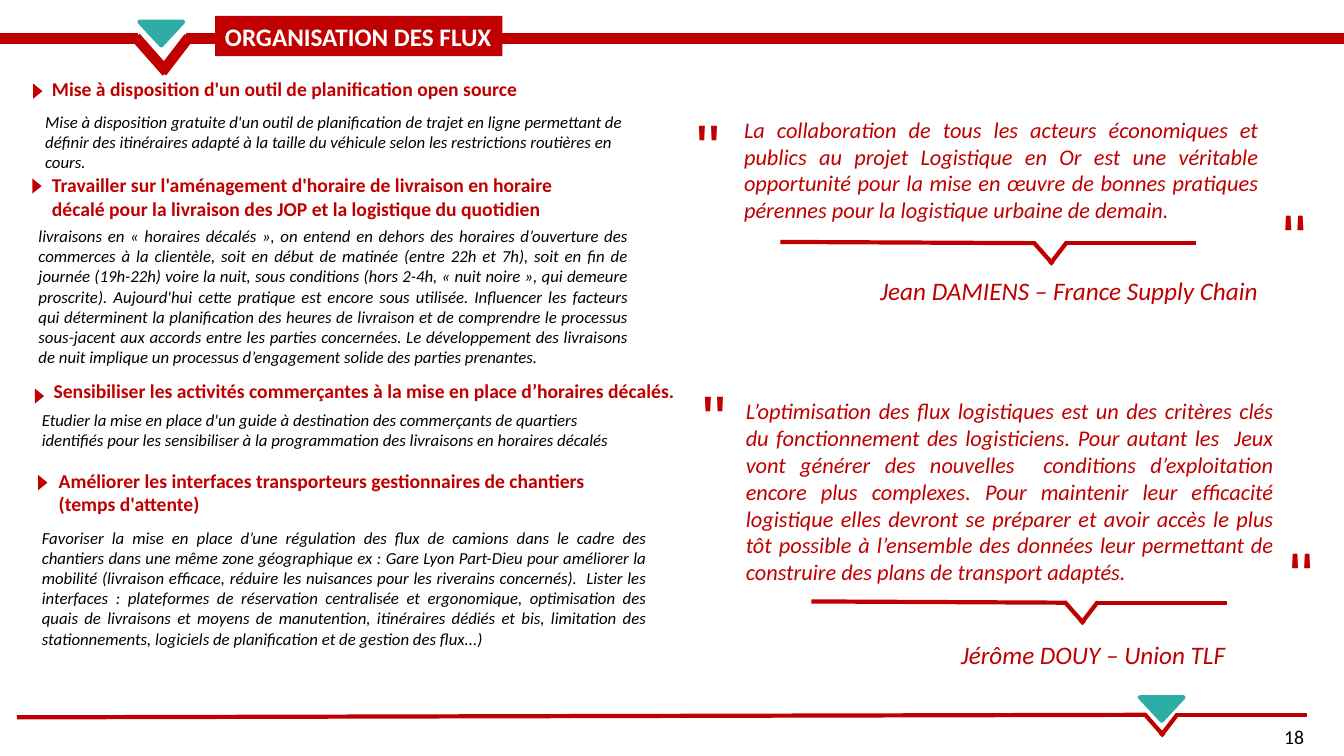
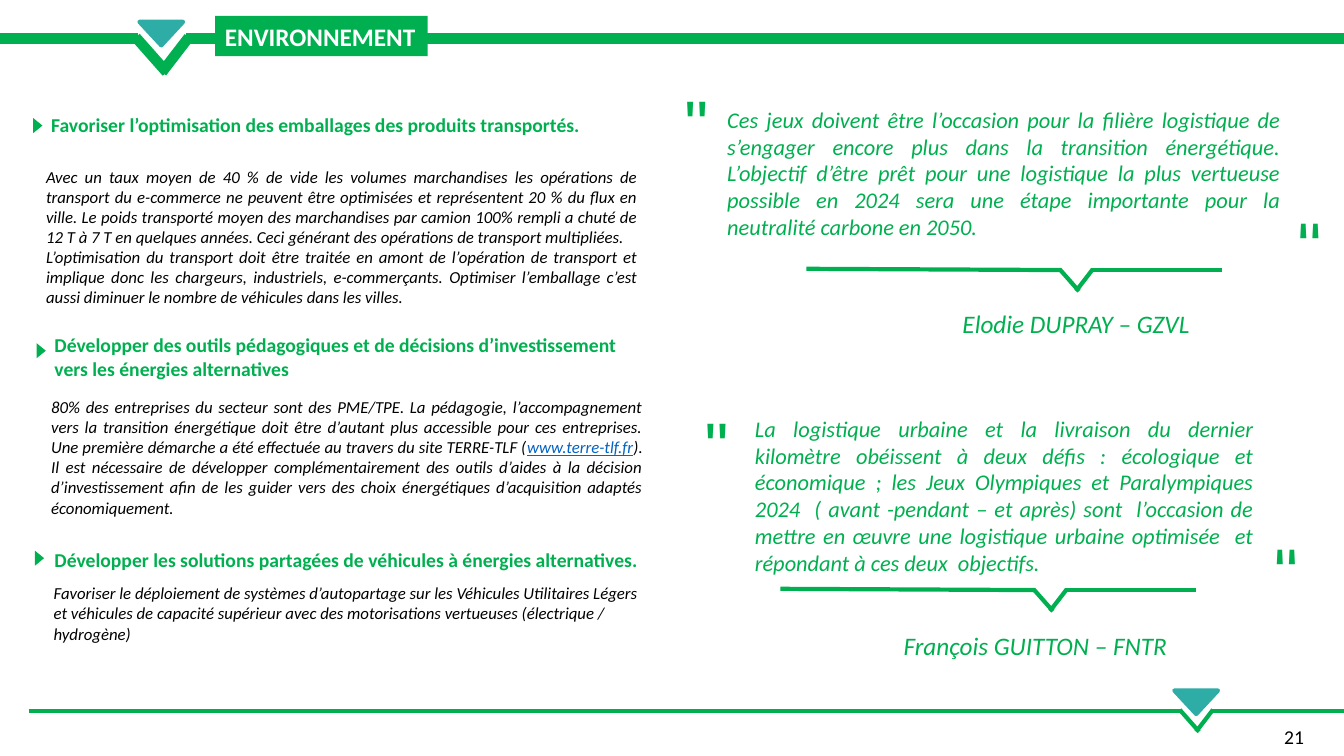
"""Build two theme slides with measures on the left and quotes on the right."""
from dataclasses import dataclass
from typing import NamedTuple

import lxml.etree
import pptx
import pptx.dml.color
import pptx.enum.shapes
import pptx.enum.text
import pptx.oxml.ns
import pptx.shapes.autoshape
import pptx.slide
import pptx.util

COLS, ROWS = 160, 90
UNIT = 76200
TEAL, BLACK, WHITE, BLUE = "2EACA6", "000000", "FFFFFF", "0563C1"
RED, GREEN = "C00000", "00B050"
SHAPE = pptx.enum.shapes.MSO_SHAPE
ALIGN = pptx.enum.text.PP_ALIGN


class Spot(NamedTuple):
    x: float
    y: float


class Box(NamedTuple):
    x: float
    y: float
    w: float
    h: float


@dataclass
class Rule:
    start: Spot
    neck: Spot
    end: float
    scale: float = 1
    width: float = 3


@dataclass
class Point:
    mark: Spot
    head: Box
    title: str
    body: Box
    words: str
    full: bool = False
    link: str = ""


@dataclass
class Quote:
    open: Spot
    close: Spot
    box: Box
    words: str
    rule: Spot
    sign: Box
    name: str


@dataclass
class Theme:
    title: str
    span: float
    tint: str
    page: str
    foot: Rule
    peak: Spot
    points: list[Point]
    quotes: list[Quote]


def size(cells: float) -> pptx.util.Emu:
    return pptx.util.Emu(round(cells * UNIT))


def tone(code: str) -> pptx.dml.color.RGBColor:
    return pptx.dml.color.RGBColor.from_string(code)


def write(frame: pptx.text.text.TextFrame, words: str, *, pt: float, tint: str,
          bold: bool = False, slant: bool = False, full: bool = False,
          font: str = "Calibri", link: str = "", wrap: bool = True) -> None:
    frame.word_wrap = wrap
    frame.auto_size = pptx.enum.text.MSO_AUTO_SIZE.SHAPE_TO_FIT_TEXT
    frame.vertical_anchor = pptx.enum.text.MSO_ANCHOR.TOP
    for i, line in enumerate(words.split("\n")):
        para = frame.add_paragraph() if i else frame.paragraphs[0]
        para.alignment = ALIGN.JUSTIFY if full else ALIGN.LEFT
        for piece in line.partition(link) if link else (line,):
            if not piece:
                continue
            run = para.add_run()
            run.text = piece
            face = run.font
            face.name, face.size = font, pptx.util.Pt(pt)
            face.bold, face.italic = bold, slant
            face.underline = piece == link
            face.color.rgb = tone(BLUE if piece == link else tint)


def text(slide: pptx.slide.Slide, box: Box, words: str, turn: float = 0, **style) -> None:
    shape = slide.shapes.add_textbox(*map(size, box))
    shape.rotation = turn
    write(shape.text_frame, words, **style)


def solid(slide: pptx.slide.Slide, kind: SHAPE, box: Box, tint: str, turn: float = 0,
          edge: float = 0) -> pptx.shapes.autoshape.Shape:
    shape = slide.shapes.add_shape(kind, *map(size, box))
    shape.shadow.inherit = False
    shape.rotation = turn
    shape.fill.solid()
    shape.fill.fore_color.rgb = tone(tint)
    if edge:
        shape.line.color.rgb = tone(tint)
        shape.line.width = pptx.util.Pt(edge)
    else:
        shape.line.fill.background()
    return shape


def stroke(slide: pptx.slide.Slide, tail: Spot, tip: Spot, tint: str, width: float) -> None:
    line = slide.shapes.add_connector(
        pptx.enum.shapes.MSO_CONNECTOR.STRAIGHT, *map(size, (*tail, *tip)))
    line.line.color.rgb = tone(tint)
    line.line.width = pptx.util.Pt(width)
    lxml.etree.SubElement(line._element.spPr, pptx.oxml.ns.qn("a:effectLst"))


def notch(slide: pptx.slide.Slide, rule: Rule, tint: str) -> None:
    def near(dx: float, dy: float) -> Spot:
        return Spot(rule.neck.x + dx * rule.scale, rule.neck.y + dy * rule.scale)

    for tail, tip in (
        (rule.start, rule.neck),
        (near(-0.15, -0.1), near(2.15, 2.5)),
        (near(3.8, -0.1), near(1.8, 2.5)),
        (near(3.6, 0), Spot(rule.end, rule.neck.y)),
    ):
        stroke(slide, tail, tip, tint, rule.width)


def peak(slide: pptx.slide.Slide, spot: Spot) -> None:
    solid(slide, SHAPE.ISOSCELES_TRIANGLE, Box(*spot, 5.2, 2.8), TEAL, 180, 3)


def point(slide: pptx.slide.Slide, item: Point, tint: str) -> None:
    solid(slide, SHAPE.ISOSCELES_TRIANGLE, Box(*item.mark, 1.8, 1.1), tint, 90)
    text(slide, item.head, item.title, pt=14, tint=tint, bold=True)
    text(slide, item.body, item.words, pt=12, tint=BLACK, slant=True,
         full=item.full, link=item.link)


def quote(slide: pptx.slide.Slide, item: Quote, tint: str) -> None:
    for spot, turn in ((item.open, 0), (item.close, 180)):
        text(slide, Box(*spot, 10.4, 10.9), '"', turn, pt=48, tint=tint, font="Arial")
    text(slide, item.box, item.words, pt=16, tint=tint, slant=True, full=True)
    x, y = item.rule
    notch(slide, Rule(item.rule, Spot(x + 30.3, y + 0.15), x + 49.5), tint)
    text(slide, item.sign, item.name, pt=18, tint=tint, slant=True)


def build(deck: pptx.presentation.Presentation, theme: Theme) -> None:
    slide = deck.slides.add_slide(deck.slide_layouts[6])
    notch(slide, Rule(Spot(0, 4.6), Spot(16.4, 4.6), COLS, 1.6, 7.5), theme.tint)
    peak(slide, Spot(16.6, 2.6))
    band = solid(slide, SHAPE.RECTANGLE, Box(25.6, 1.9, theme.span, 4.8), theme.tint)
    write(band.text_frame, theme.title, pt=18, tint=WHITE, bold=True, wrap=False)
    notch(slide, theme.foot, theme.tint)
    peak(slide, theme.peak)
    for item in theme.points:
        point(slide, item, theme.tint)
    for item in theme.quotes:
        quote(slide, item, theme.tint)
    text(slide, Box(151.7, 85.7, 6.4, 4.1), theme.page, pt=14, tint=BLACK)


THEMES = [
    Theme(
        "ORGANISATION DES FLUX", 34.2, RED, "18",
        Rule(Spot(2, 85.4), Spot(136.4, 85.1), 155.6), Spot(135.7, 83),
        [
            Point(Spot(3.6, 10.3), Box(5, 8.6, 68, 4.1),
                  "Mise à disposition d'un outil de planification open source",
                  Box(4.2, 12.7, 71.5, 8.5),
                  "Mise à disposition gratuite d'un outil de planification de trajet en ligne "
                  "permettant de définir des itinéraires adapté à la taille du véhicule selon "
                  "les restrictions routières en cours."),
            Point(Spot(3.5, 21.6), Box(5, 20, 66.7, 6.8),
                  "Travailler sur l'aménagement d'horaire de livraison en horaire décalé pour "
                  "la livraison des JOP et la logistique du quotidien",
                  Box(3.4, 26.3, 72.6, 18.1),
                  "livraisons en « horaires décalés », on entend en dehors des horaires "
                  "d’ouverture des commerces à la clientèle, soit en début de matinée (entre 22h "
                  "et 7h), soit en fin de journée (19h-22h) voire la nuit, sous conditions (hors "
                  "2-4h, « nuit noire », qui demeure proscrite). Aujourd'hui cette pratique est "
                  "encore sous utilisée. Influencer les facteurs qui déterminent la planification "
                  "des heures de livraison et de comprendre le processus sous-jacent aux accords "
                  "entre les parties concernées. Le développement des livraisons de nuit implique "
                  "un processus d’engagement solide des parties prenantes.", True),
            Point(Spot(3.8, 46.6), Box(5.2, 44.5, 76.6, 4.1),
                  "Sensibiliser les activités commerçantes à la mise en place d’horaires décalés.",
                  Box(3.8, 48.2, 71.5, 6),
                  "Etudier la mise en place d'un guide à destination des commerçants de quartiers "
                  "identifiés pour les sensibiliser à la programmation des livraisons en horaires "
                  "décalés"),
            Point(Spot(4.2, 56.9), Box(5.8, 55.2, 66.8, 6.8),
                  "Améliorer les interfaces transporteurs gestionnaires de chantiers "
                  "(temps d'attente)",
                  Box(3.8, 62.2, 74.4, 15.7),
                  "Favoriser la mise en place d’une régulation des flux de camions dans le cadre "
                  "des chantiers dans une même zone géographique ex : Gare Lyon Part-Dieu pour "
                  "améliorer la mobilité (livraison efficace, réduire les nuisances pour les "
                  "riverains concernés).  Lister les interfaces : plateformes de réservation "
                  "centralisée et ergonomique, optimisation des quais de livraisons et moyens de "
                  "manutention, itinéraires dédiés et bis, limitation des stationnements, "
                  "logiciels de planification et de gestion des flux...)", True),
        ],
        [
            Quote(Spot(81.7, 12), Spot(146.3, 19.7), Box(87.4, 13.2, 63.6, 14.2),
                  "La collaboration de tous les acteurs économiques et publics au projet "
                  "Logistique en Or est une véritable opportunité pour la mise en œuvre de bonnes "
                  "pratiques pérennes pour la logistique urbaine de demain.",
                  Spot(92.9, 28.8), Box(103.6, 32.2, 51, 4.8),
                  "Jean DAMIENS – France Supply Chain"),
            Quote(Spot(82.4, 44.2), Spot(147.1, 59.9), Box(87.6, 46.7, 65.2, 23.9),
                  "L’optimisation des flux logistiques est un des critères clés du fonctionnement "
                  "des logisticiens. Pour autant les  Jeux vont générer des nouvelles  conditions "
                  "d’exploitation encore plus complexes. Pour maintenir leur efficacité logistique "
                  "elles devront se préparer et avoir accès le plus tôt possible à l’ensemble des "
                  "données leur permettant de construire des plans de transport adaptés.",
                  Spot(96.6, 71.6), Box(113.2, 75.5, 35, 4.8), "Jérôme DOUY – Union TLF"),
        ],
    ),
    Theme(
        "ENVIRONNEMENT", 25.3, GREEN, "21",
        Rule(Spot(3.4, 84.6), Spot(140.6, 84.6), COLS), Spot(139.8, 82.2),
        [
            Point(Spot(3.6, 14.4), Box(4.9, 12.8, 67.3, 4.1),
                  "Favoriser l’optimisation des emballages des produits transportés.",
                  Box(4.3, 19.2, 72.8, 18.1),
                  "Avec un taux moyen de 40 % de vide les volumes marchandises les opérations de "
                  "transport du e-commerce ne peuvent être optimisées et représentent 20 % du flux "
                  "en ville. Le poids transporté moyen des marchandises par camion 100% rempli a "
                  "chuté de 12 T à 7 T en quelques années. Ceci générant des opérations de "
                  "transport multipliées.\n"
                  "L’optimisation du transport doit être traitée en amont de l’opération de "
                  "transport et implique donc les chargeurs, industriels, e-commerçants. Optimiser "
                  "l’emballage c’est aussi diminuer le nombre de véhicules dans les villes.", True),
            Point(Spot(4, 41.2), Box(5.3, 39.1, 70.2, 6.8),
                  "Développer des outils pédagogiques et de décisions d’investissement vers les "
                  "énergies alternatives",
                  Box(4.9, 46.6, 72.8, 15.7),
                  "80% des entreprises du secteur sont des PME/TPE. La pédagogie, l’accompagnement "
                  "vers la transition énergétique doit être d’autant plus accessible pour ces "
                  "entreprises. Une première démarche a été effectuée au travers du site TERRE-TLF "
                  "(www.terre-tlf.fr). Il est nécessaire de développer complémentairement des "
                  "outils d’aides à la décision d’investissement afin de les guider vers des choix "
                  "énergétiques d’acquisition adaptés économiquement.", True, "www.terre-tlf.fr"),
            Point(Spot(3.8, 65.9), Box(5.3, 64.6, 74.2, 4.1),
                  "Développer les solutions partagées de véhicules à énergies alternatives.",
                  Box(5.2, 68.8, 72.6, 8.5),
                  "Favoriser le déploiement de systèmes d’autopartage sur les Véhicules "
                  "Utilitaires Légers et véhicules de capacité supérieur avec des motorisations "
                  "vertueuses (électrique / hydrogène)"),
        ],
        [
            Quote(Spot(80.3, 9.1), Spot(148.1, 20.6), Box(85.4, 12, 68.2, 17.4),
                  "Ces jeux doivent être l’occasion pour la filière logistique de s’engager encore "
                  "plus dans la transition énergétique. L’objectif d’être prêt pour une logistique "
                  "la plus vertueuse possible en 2024 sera une étape importante pour la neutralité "
                  "carbone en 2050.",
                  Spot(96, 32), Box(113.4, 36.1, 33.2, 4.8), "Elodie DUPRAY – GZVL"),
            Quote(Spot(82.7, 47.4), Spot(145.3, 59.4), Box(88.7, 48.8, 61.7, 20.6),
                  "La logistique urbaine et la livraison du dernier kilomètre obéissent à deux "
                  "défis : écologique et économique ; les Jeux Olympiques et Paralympiques 2024  "
                  "( avant -pendant – et après) sont  l’occasion de mettre en œuvre une logistique "
                  "urbaine optimisée  et répondant à ces deux  objectifs.",
                  Spot(92.9, 70.1), Box(106.4, 74.5, 35, 4.8), "François GUITTON – FNTR"),
        ],
    ),
]


def main() -> None:
    deck = pptx.Presentation()
    deck.slide_width, deck.slide_height = size(COLS), size(ROWS)
    for theme in THEMES:
        build(deck, theme)
    deck.save("out.pptx")


if __name__ == "__main__":
    main()
